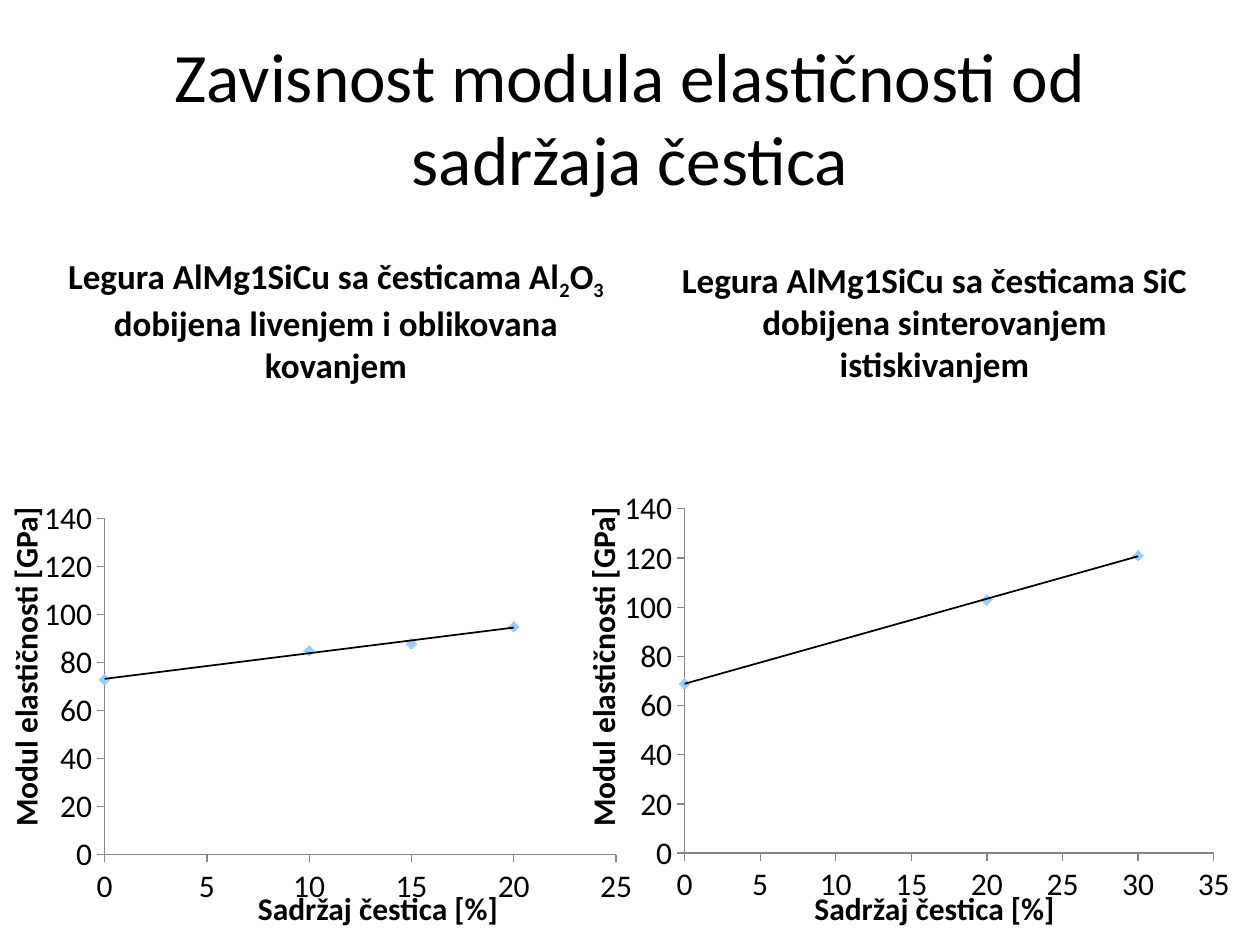
import pptx
import pptx.chart.data
import pptx.dml.color
import pptx.enum.chart
import pptx.enum.text
import pptx.oxml
import pptx.oxml.ns
import pptx.util

BLACK = pptx.dml.color.RGBColor(0, 0, 0)
GREY = pptx.dml.color.RGBColor(0x86, 0x86, 0x86)
SKY = pptx.dml.color.RGBColor(0x99, 0xCC, 0xFF)
FONT = "Calibri"

deck = pptx.Presentation()
deck.slide_width = pptx.util.Inches(10)
deck.slide_height = pptx.util.Inches(7.5)
COL = deck.slide_width / 120
ROW = deck.slide_height / 90
slide = deck.slides.add_slide(deck.slide_layouts[5])


def grid(left, top, wide, high):
    return int(left * COL), int(top * ROW), int(wide * COL), int(high * ROW)


def write(shape, text, size=18, bold=True, vert=None, anchor="TOP"):
    """Fill a shape with one centred paragraph; text between underscores is subscript."""
    frame = shape.text_frame
    frame.word_wrap = True
    frame.vertical_anchor = getattr(pptx.enum.text.MSO_ANCHOR, anchor)
    if vert:
        frame._txBody.bodyPr.set("vert", vert)
    para = frame.paragraphs[0]
    para.alignment = pptx.enum.text.PP_ALIGN.CENTER
    for num, part in enumerate(text.split("_")):
        if not part:
            continue
        run = para.add_run()
        run.text = part
        run.font.name = FONT
        run.font.size = pptx.util.Pt(size)
        run.font.bold = bold
        run.font.color.rgb = BLACK
        if num % 2:
            run._r.get_or_add_rPr().set("baseline", "-25000")


title = slide.shapes.title
title.left, title.top, title.width, title.height = grid(6, 3.6, 108, 15)
write(title, "Zavisnost modula elastičnosti od sadržaja čestica",
      size=39.6, bold=False, anchor="MIDDLE")

NS = pptx.oxml.ns.nsdecls("c", "a")
TREND = f"""<c:trendline {NS}>
  <c:spPr><a:ln w="12700"><a:solidFill><a:srgbClr val="{BLACK}"/></a:solidFill></a:ln></c:spPr>
  <c:trendlineType val="linear"/><c:dispRSqr val="0"/><c:dispEq val="0"/>
</c:trendline>"""
LAYOUT = f"""<c:layout {NS}><c:manualLayout>
  <c:layoutTarget val="inner"/><c:xMode val="edge"/><c:yMode val="edge"/>
  <c:x val="0.12"/><c:y val="0.06"/><c:w val="0.84"/><c:h val="0.8"/>
</c:manualLayout></c:layout>"""

# heading, its box, chart box, points, x maximum, left of y label, left of x label
PANELS = [
    ("Legura AlMg1SiCu sa česticama Al_2_O_3_ dobijena livenjem i oblikovana kovanjem",
     (5, 23.6, 54, 13.3), (3, 47, 58, 40),
     [(0, 73), (10, 85), (15, 88), (20, 95)], 25, 0, 23),
    ("Legura AlMg1SiCu sa česticama SiC dobijena sinterovanjem istiskivanjem",
     (63, 24, 52, 13.3), (58, 46, 60, 41),
     [(0, 69), (20, 103), (30, 121)], 35, 55, 76),
]

for head, box, area, points, top, yleft, xleft in PANELS:
    write(slide.shapes.add_textbox(*grid(*box)), head, size=20)

    data = pptx.chart.data.XyChartData()
    series = data.add_series("Modul elastičnosti")
    for x, y in points:
        series.add_data_point(x, y)
    kind = pptx.enum.chart.XL_CHART_TYPE.XY_SCATTER
    chart = slide.shapes.add_chart(kind, *grid(*area), data).chart
    chart.has_legend = False
    chart.has_title = False
    chart.font.name = FONT
    chart.font.size = pptx.util.Pt(18)
    chart.font.color.rgb = BLACK

    plot = chart.plots[0]
    plot.vary_by_categories = False
    dots = plot.series[0]
    dots.smooth = False
    dots.format.line.fill.background()
    dots.marker.style = pptx.enum.chart.XL_MARKER_STYLE.DIAMOND
    dots.marker.size = 6
    dots.marker.format.fill.solid()
    dots.marker.format.fill.fore_color.rgb = SKY
    dots.marker.format.line.color.rgb = SKY
    xval = dots._element.find(pptx.oxml.ns.qn("c:xVal"))
    xval.addprevious(pptx.oxml.parse_xml(TREND))

    for axis, limit, step in ((chart.category_axis, top, 5), (chart.value_axis, 140, 20)):
        axis.minimum_scale = 0
        axis.maximum_scale = limit
        axis.major_unit = step
        axis.has_major_gridlines = False
        axis.major_tick_mark = pptx.enum.chart.XL_TICK_MARK.OUTSIDE
        axis.format.line.color.rgb = GREY
        axis.tick_labels.font.size = pptx.util.Pt(18)

    field = chart._chartSpace.chart.plotArea
    for old in field.findall(pptx.oxml.ns.qn("c:layout")):
        field.remove(old)
    field.insert(0, pptx.oxml.parse_xml(LAYOUT))

    write(slide.shapes.add_textbox(*grid(yleft, 47, 6, 33)),
          "Modul elastičnosti [GPa]", vert="vert270")
    write(slide.shapes.add_textbox(*grid(xleft, 84.1, 26, 4.8)), "Sadržaj čestica [%]")

deck.save("out.pptx")
